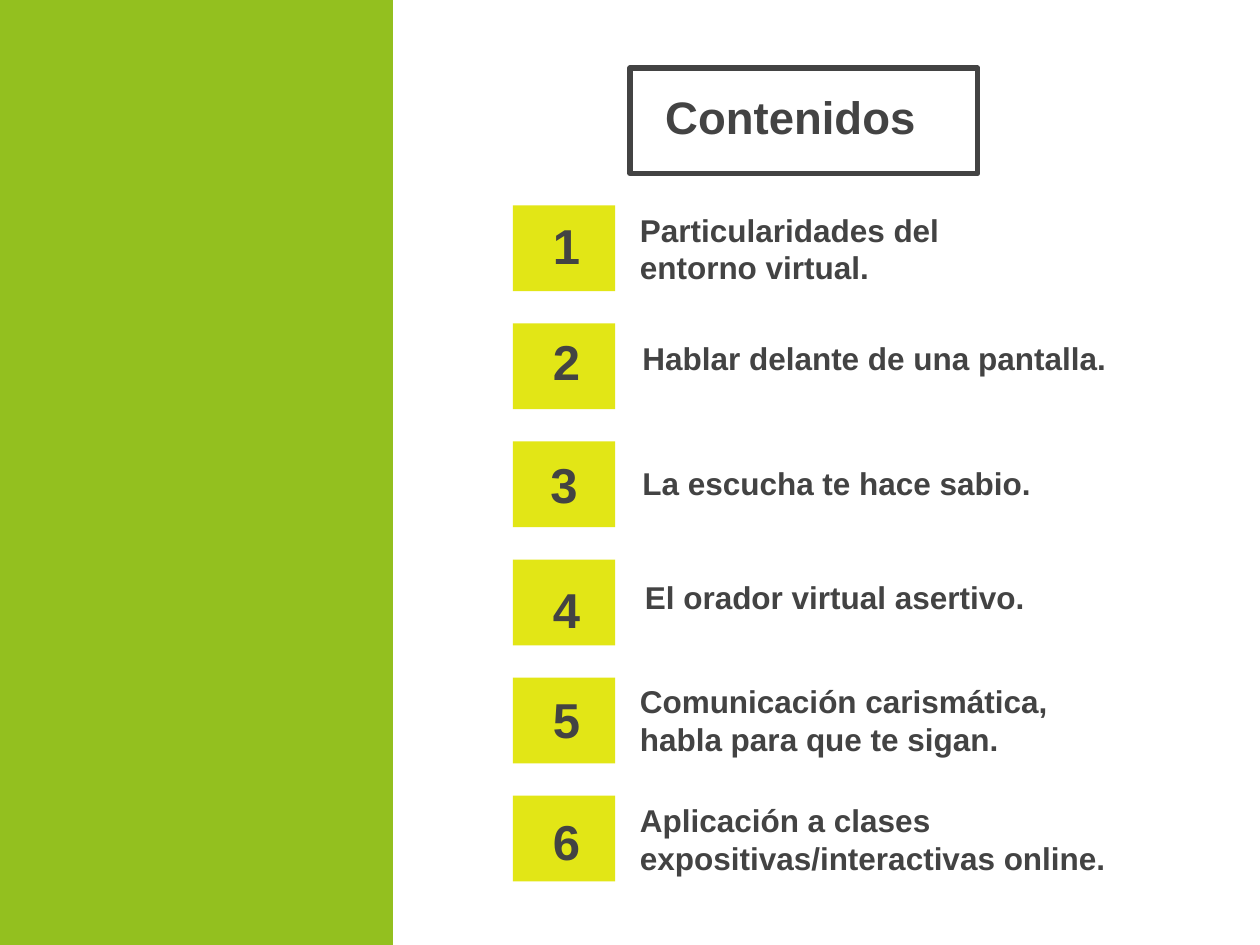
from pptx import Presentation
from pptx.dml.color import RGBColor as RGB
from pptx.enum.shapes import MSO_SHAPE as Shape
from pptx.enum.text import MSO_ANCHOR as Anchor, MSO_AUTO_SIZE as Fit, PP_ALIGN as Align
from pptx.util import Cm, Pt

HUE = {"green": "93C01F", "lime": "E2E616", "gray": "434343"}

prs = Presentation()
prs.slide_width, prs.slide_height = Cm(25.4), Cm(19.05)
slide = prs.slides.add_slide(prs.slide_layouts[5])
shapes = slide.shapes


def add_rect(x, y, w, h, fill=None):
    rect = shapes.add_shape(Shape.RECTANGLE, Cm(x), Cm(y), Cm(w), Cm(h))
    rect.shadow.inherit = False
    if fill:
        rect.fill.solid()
        rect.fill.fore_color.rgb = RGB.from_string(HUE[fill])
        rect.line.fill.background()
    else:
        rect.fill.background()
        rect.line.color.rgb = RGB.from_string(HUE["gray"])
        rect.line.width = Pt(3)


def write(box, at, paras, size, anchor, align=Align.LEFT):
    """Place a box and fill it; each paragraph is a list of lines."""
    box.left, box.top, box.width, box.height = [Cm(n) for n in at]
    frame = box.text_frame
    frame.word_wrap = True
    frame.auto_size = Fit.NONE
    frame.vertical_anchor = anchor
    frame.margin_left = frame.margin_right = Cm(0.25)
    frame.margin_top = frame.margin_bottom = Cm(0.25)
    for i, lines in enumerate(paras):
        para = frame.add_paragraph() if i else frame.paragraphs[0]
        para.alignment = align
        for j, line in enumerate(lines):
            if j:
                para.add_line_break()
            run = para.add_run()
            run.text = line
            font = run.font
            font.name, font.size, font.bold = "Arial", Pt(size), True
            font.color.rgb = RGB.from_string(HUE["gray"])


# Side band and title frame
add_rect(0, 0, 7.92, 19.05, "green")
add_rect(12.7, 1.37, 7.01, 2.13)

# Title
title = shapes.title
write(title, (13.16, 0.2, 14.76, 4.11), [["Contenidos"]], 26, Anchor.MIDDLE)
title.text_frame.paragraphs[0].line_spacing = 1.15

# Contents: number left and top, text left, top and width, paragraphs
items = [
    (9.78, 4.06, 12.65, 3.48, 10.44, [["Particularidades del ", "entorno virtual."]]),
    (9.78, 6.4, 12.7, 5.31, 14.76, [["Hablar delante de una pantalla."]]),
    (9.73, 8.89, 12.7, 7.82, 14.76, [["La escucha te hace sabio."]]),
    (9.78, 11.4, 12.75, 10.13, 14.76, [["El orador virtual asertivo."]]),
    (9.78, 13.61, 12.65, 12.98, 11.23,
     [["Comunicación carismática,"], ["habla para que te sigan."]]),
    (9.78, 16.08, 12.65, 15.39, 11.23,
     [["Aplicación a clases expositivas/interactivas online."]]),
]
for i, (nx, ny, x, y, w, paras) in enumerate(items):
    add_rect(10.34, 4.14 + 2.38 * i, 2.06, 1.73, "lime")
    num = shapes.add_textbox(0, 0, 0, 0)
    write(num, (nx, ny, 3.28, 1.75), [[str(i + 1)]], 28, Anchor.MIDDLE, Align.CENTER)
    text = shapes.add_textbox(0, 0, 0, 0)
    write(text, (x, y, w, 2.54), paras, 18, Anchor.BOTTOM)

prs.save("out.pptx")
